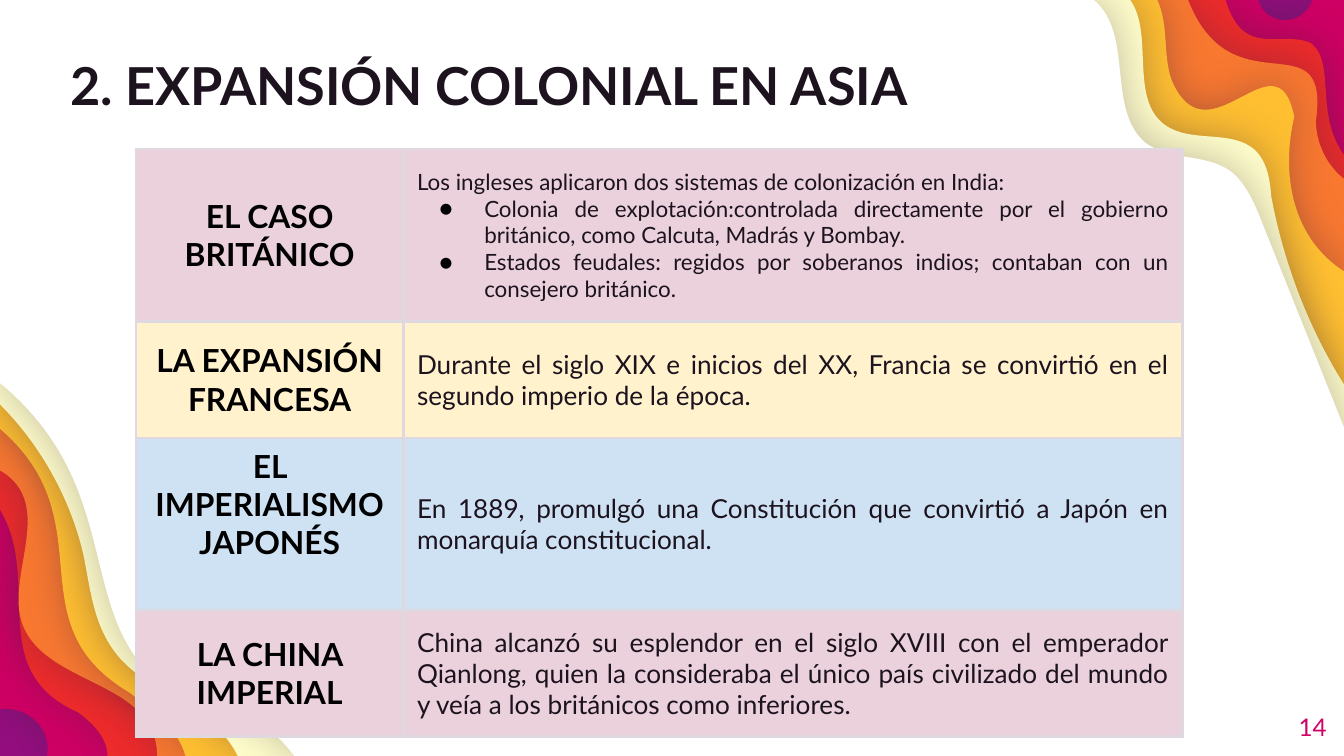
from lxml import etree
from pptx import Presentation
from pptx import util as u
from pptx.dml.color import RGBColor
from pptx.enum import text
from pptx.oxml import ns

COLORS = {
    "purple": "940D7F", "magenta": "CE0063", "red": "ED2B2B", "orange": "F97830",
    "amber": "FFBF31", "cream": "FEFDCA", "white": "FFFFFF", "shadow": "39273F",
    "ink": "1C131F", "black": "000000", "border": "E0D8E0",
    "pink": "EAD1DC", "yellow": "FFF2CC", "blue": "CFE2F3",
}
WIDTH, HEIGHT = 720, 405
LEFT, CENTER, RIGHT, JUSTIFY = (getattr(text.PP_ALIGN, n) for n in ("LEFT", "CENTER", "RIGHT", "JUSTIFY"))
TOP, MIDDLE, BOTTOM = (getattr(text.MSO_ANCHOR, n) for n in ("TOP", "MIDDLE", "BOTTOM"))

WAVES = [
    ("magenta",
     [(720, 0), (720, 0), (703, 0), (703, 0), (698.4, 14.4), (678.2, 14.4), (674, 0)],
     [(0, 380), (14.4, 378), (28, 390), (25.2, 405)]),
    ("red",
     [(720, 83), (704, 61), (716, 33), (702, 23), (686, 16), (666, 31.7), (656.6, 0)],
     [(0, 273), (23, 311), (-8.6, 359.3), (41.8, 381.6), (49.7, 387.4), (57.6, 395.3), (57.6, 405)]),
    ("orange",
     [(720, 95.8), (710.6, 88.6), (705, 76.3), (705, 64.8), (712.8, 8.6), (660.2, 60.5), (636.5, 0)],
     [(0, 252), (31, 270), (2.2, 309), (12.2, 334.8), (25.2, 368), (84.2, 364.3), (84.2, 405)]),
    ("amber",
     [(720, 145.4), (692, 127.4), (686.2, 93), (693.4, 62.6), (684, 15.8), (647.3, 88.6),
      (627.8, 43.2), (622.8, 29.5), (626.4, 13.7), (620, 0)],
     [(0, 229.7), (57.6, 279.4), (6.5, 333.4), (69, 370.8), (81.4, 380.2), (95, 389.5), (99.4, 405)]),
    ("cream",
     [(720, 206), (700.6, 175), (687.6, 140.4), (681, 105), (680.4, 96.5), (679, 87), (672.5, 80.6),
      (660.2, 69), (638, 77), (624.2, 67), (604.8, 53.3), (618.5, 18), (605.5, 0)],
     [(0, 216.7), (21.6, 238.3), (37.4, 266.4), (44.6, 296.6), (48.2, 314), (49.7, 332.6), (60.5, 347.8),
      (71.3, 363.6), (90.7, 370.8), (107.3, 382.3), (115.2, 388), (123, 396), (127.4, 405)]),
    ("white",
     [(720, 229), (720, 229), (675.4, 117.4), (675.4, 117.4), (671.8, 108), (666.7, 97.2), (658.8, 91.4),
      (645, 82), (626.4, 86.4), (613.4, 76.3), (592.6, 58.3), (607.7, 18), (586, 0)],
     [(0, 205.2), (67.7, 261.4), (39.6, 328.3), (85.7, 365.8), (99.4, 375), (117.4, 377.3), (132.5, 384.5),
      (142.6, 388.8), (151.2, 396), (157.7, 405)]),
]

ROWS = [
    ("pink", 92.5, "EL CASO BRITÁNICO", MIDDLE, 12, [
        "Los ingleses aplicaron dos sistemas de colonización en India:",
        "Colonia de explotación:controlada directamente por el gobierno británico, como Calcuta, Madrás y Bombay.",
        "Estados feudales: regidos por soberanos indios; contaban con un consejero británico."]),
    ("yellow", 62.3, "LA EXPANSIÓN FRANCESA", MIDDLE, 14, [
        "Durante el siglo XIX e inicios del XX, Francia se convirtió en el segundo imperio de la época."]),
    ("blue", 92.5, "EL IMPERIALISMO JAPONÉS", TOP, 14, [
        "En 1889, promulgó una Constitución que convirtió a Japón en monarquía constitucional."]),
    ("pink", 67.5, "LA CHINA IMPERIAL", MIDDLE, 14, [
        "China alcanzó su esplendor en el siglo XVIII con el emperador Qianlong, quien la consideraba "
        "el único país civilizado del mundo y veía a los británicos como inferiores."]),
]
COLUMNS = [143.5, 143.5, 143.5, 130.3]


def rgb(name):
    return RGBColor.from_string(COLORS[name])


def sub(parent, tag, **attrs):
    return etree.SubElement(parent, ns.qn(tag), {k: str(v) for k, v in attrs.items()})


class Deck:
    font = "Lato"

    def __init__(self):
        self.prs = Presentation()
        self.prs.slide_width, self.prs.slide_height = u.Pt(WIDTH), u.Pt(HEIGHT)
        self.s = self.prs.slides.add_slide(self.prs.slide_layouts[6])

    def background(self, color):
        fill = self.s.background.fill
        fill.solid()
        fill.fore_color.rgb = rgb(color)

    def curve(self, line, start, first, second, end):
        if (start, second) == (first, end):
            return
        line.tag = ns.qn("a:cubicBezTo")
        for i, (x, y) in enumerate((first, second)):
            line.insert(i, line.makeelement(ns.qn("a:pt"), {"x": str(u.Pt(x)), "y": str(u.Pt(y))}))

    def wave(self, color, right, left):
        outline = right[::3] + [(0, 0)] + left[::3] + [(WIDTH, HEIGHT)]
        start, *rest = [(u.Pt(x), u.Pt(y)) for x, y in outline]
        builder = self.s.shapes.build_freeform(*start)
        builder.add_line_segments(rest, close=True)
        sp = builder.convert_to_shape()
        lines = list(sp._element.iter(ns.qn("a:lnTo")))
        for points, first in ((right, 0), (left, len(right) // 3 + 2)):
            for n in range(len(points) // 3):
                self.curve(lines[first + n], *points[3 * n:3 * n + 4])
        sp.fill.solid()
        sp.fill.fore_color.rgb = rgb(color)
        sp.line.fill.background()
        sp.shadow.inherit = False
        effects = sp._element.spPr.find(ns.qn("a:effectLst"))
        shadow = sub(effects, "a:outerShdw", blurRad=u.Pt(22.5), dist=u.Pt(0.8), dir=0,
                     algn="ctr", rotWithShape=0)
        sub(sub(shadow, "a:srgbClr", val=COLORS["shadow"]), "a:alpha", val=30000)

    def style(self, p, size, color, bold=False, align=LEFT):
        p.alignment = align
        for r in p.runs:
            r.font.name, r.font.size, r.font.bold = self.font, u.Pt(size), bold
            r.font.color.rgb = rgb(color)

    def label(self, box, content, size, color, anchor, bold=False, align=LEFT, spacing=1.0):
        tf = self.s.shapes.add_textbox(*map(u.Pt, box)).text_frame
        tf.word_wrap = True
        tf.margin_left = tf.margin_top = tf.margin_right = tf.margin_bottom = 0
        tf.vertical_anchor = anchor
        tf.text = content
        tf.paragraphs[0].line_spacing = spacing
        self.style(tf.paragraphs[0], size, color, bold, align)

    def bullet(self, p, size):
        pPr = p._p.get_or_add_pPr()
        pPr.set("marL", str(u.Pt(36)))
        pPr.set("indent", str(u.Pt(-24)))
        sub(sub(pPr, "a:buClr"), "a:srgbClr", val=COLORS["black"])
        sub(pPr, "a:buSzPts", val=size * 100)
        sub(pPr, "a:buFont", typeface=self.font)
        sub(pPr, "a:buChar", char="●")

    def cell(self, cell, color):
        tcPr = cell._tc.get_or_add_tcPr()
        for side in "LRTB":
            line = sub(tcPr, f"a:ln{side}", w=u.Pt(1.5))
            sub(sub(line, "a:solidFill"), "a:srgbClr", val=COLORS["border"])
        cell.fill.solid()
        cell.fill.fore_color.rgb = rgb(color)
        cell.margin_left = cell.margin_right = u.Pt(7.2)
        cell.margin_top = cell.margin_bottom = u.Pt(5)
        cell.vertical_anchor = MIDDLE

    def table(self, x, y, columns, rows):
        box = (x, y, sum(columns), sum(row[1] for row in rows))
        table = self.s.shapes.add_table(len(rows), len(columns), *map(u.Pt, box)).table
        table.first_row = table.horz_banding = False
        for column, width in zip(table.columns, columns):
            column.width = u.Pt(width)
        for i, (color, height, heading, anchor, size, lines) in enumerate(rows):
            table.rows[i].height = u.Pt(height)
            for cell in table.rows[i].cells:
                self.cell(cell, color)
            head, body = table.cell(i, 0), table.cell(i, 1)
            body.merge(table.cell(i, len(columns) - 1))
            head.vertical_anchor = anchor
            head.text_frame.text = heading
            self.style(head.text_frame.paragraphs[0], 17, "black", True, CENTER)
            body.text_frame.text = "\n".join(lines)
            for n, p in enumerate(body.text_frame.paragraphs):
                self.style(p, size, "ink", align=JUSTIFY)
                if n:
                    self.bullet(p, size)


def main():
    deck = Deck()
    deck.background("purple")
    for wave in WAVES:
        deck.wave(*wave)
    deck.label((37.5, 26, 533, 36), "2. EXPANSIÓN COLONIAL EN ASIA", 28, "ink", BOTTOM, bold=True, spacing=0.8)
    deck.table(72.75, 79.75, COLUMNS, ROWS)
    deck.label((667.5, 373.7, 43.2, 31), "14", 13, "magenta", MIDDLE, align=RIGHT)
    deck.prs.save("out.pptx")


if __name__ == "__main__":
    main()
